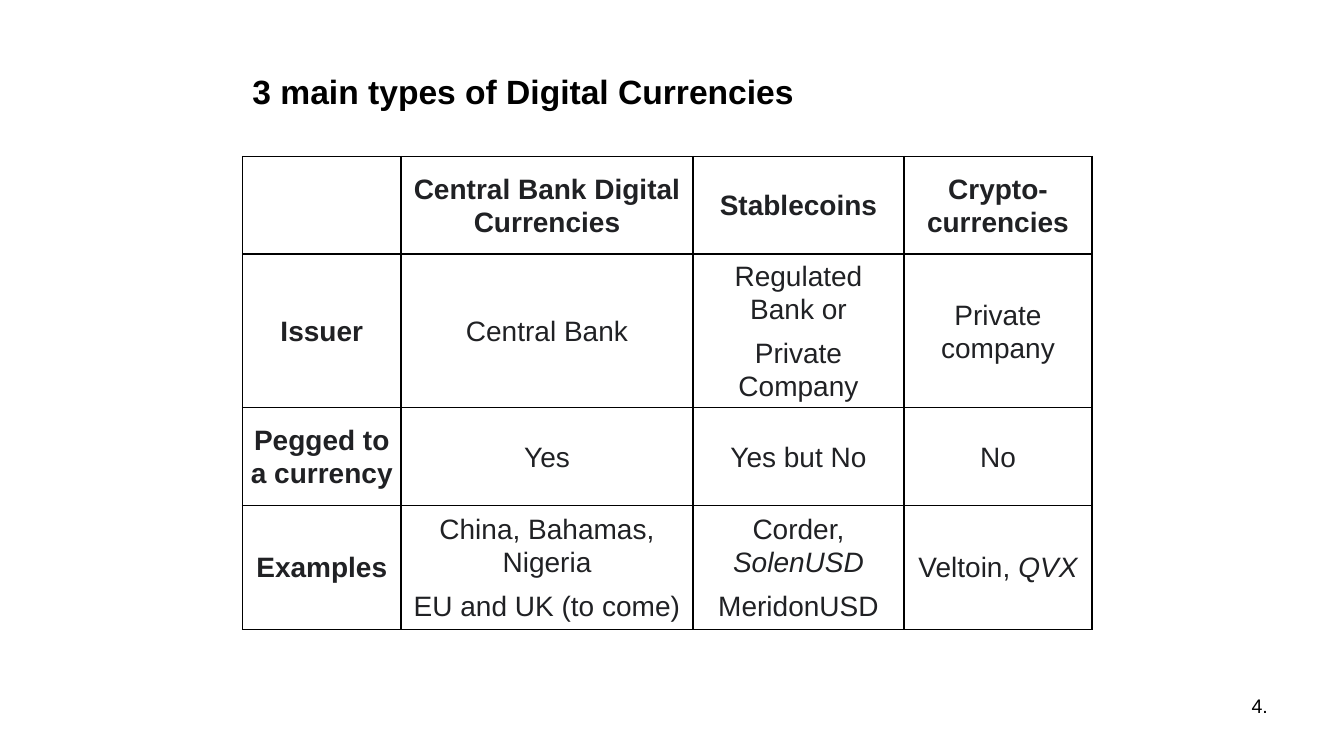
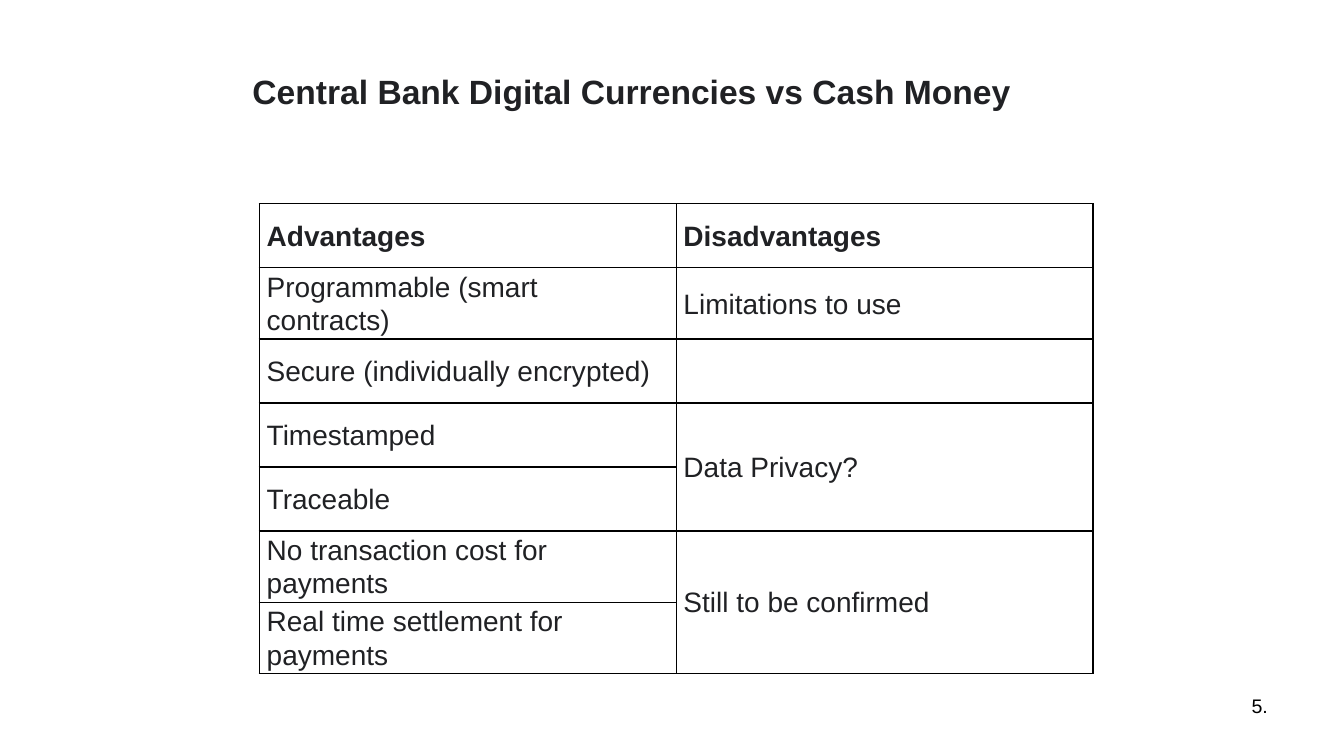
from dataclasses import dataclass

from lxml import etree
from pptx import Presentation
from pptx import util as u
from pptx.dml.color import RGBColor
from pptx.enum import text
from pptx.oxml import ns

# Shared style: lengths are px, 96 to the inch
EMU_PER_PX = 9525
FONT = "Arial"
BLACK, CHARCOAL = "000000", "202124"
TITLE_SIZE, BODY_SIZE, NUMBER_SIZE = 24, 20, 14
CELL_MARGIN = 7
LEFT, CENTER, RIGHT = text.PP_ALIGN.LEFT, text.PP_ALIGN.CENTER, text.PP_ALIGN.RIGHT


@dataclass(frozen=True)
class Run:
    words: str
    bold: bool = False
    italic: bool = False


Cell = list[list[Run]]  # paragraphs, each a list of runs


@dataclass(frozen=True)
class Box:
    left: int
    top: int
    width: int
    height: int


@dataclass(frozen=True)
class Grid:
    left: int
    top: int
    columns: list[int]
    rows: list[int]
    cells: list[list[Cell]]
    align: text.PP_ALIGN
    merges: tuple[tuple[int, int, int], ...] = ()  # column, first row, last row


TITLE_BOX = Box(231, 42, 816, 90)
NUMBER_BOX = Box(918, 656, 299, 50)


def px(length: int) -> u.Emu:
    return u.Emu(length * EMU_PER_PX)


def color(value: str) -> RGBColor:
    return RGBColor.from_string(value)


def plain(*lines: str) -> Cell:
    return [[Run(line)] for line in lines]


def bold(line: str) -> Cell:
    return [[Run(line, bold=True)]]


# Text
def add_run(paragraph, run: Run, size: int, ink: str) -> None:
    part = paragraph.add_run()
    part.text = run.words
    font = part.font
    font.name, font.size = FONT, u.Pt(size)
    font.bold, font.italic = run.bold, run.italic
    font.color.rgb = color(ink)


def add_text(slide, box: Box, run: Run, size: int, ink: str, align, anchor) -> None:
    shape = slide.shapes.add_textbox(px(box.left), px(box.top), px(box.width), px(box.height))
    frame = shape.text_frame
    frame.word_wrap = True
    frame.vertical_anchor = anchor
    paragraph = frame.paragraphs[0]
    paragraph.alignment = align
    add_run(paragraph, run, size, ink)


# Tables
def add_borders(cell) -> None:
    properties = cell._tc.get_or_add_tcPr()
    for side in ("lnL", "lnR", "lnT", "lnB"):
        line = etree.SubElement(properties, ns.qn(f"a:{side}"), w=str(u.Pt(1)))
        fill = etree.SubElement(line, ns.qn("a:solidFill"))
        etree.SubElement(fill, ns.qn("a:srgbClr"), val=BLACK)


def fill_cell(cell, content: Cell, align) -> None:
    add_borders(cell)
    cell.fill.background()
    cell.vertical_anchor = text.MSO_ANCHOR.MIDDLE
    cell.margin_left = cell.margin_right = px(CELL_MARGIN)
    cell.margin_top = cell.margin_bottom = 0
    frame = cell.text_frame
    for index, runs in enumerate(content):
        paragraph = frame.add_paragraph() if index else frame.paragraphs[0]
        paragraph.alignment = align
        paragraph.line_spacing = 1.06
        paragraph.space_after = u.Pt(8)
        for run in runs:
            add_run(paragraph, run, BODY_SIZE, CHARCOAL)


def add_grid(slide, grid: Grid) -> None:
    table = slide.shapes.add_table(
        len(grid.rows), len(grid.columns), px(grid.left), px(grid.top),
        px(sum(grid.columns)), px(sum(grid.rows))).table
    table.first_row = table.horz_banding = False
    for column, width in zip(table.columns, grid.columns):
        column.width = px(width)
    for row, height in zip(table.rows, grid.rows):
        row.height = px(height)
    for column, first, last in grid.merges:
        table.cell(first, column).merge(table.cell(last, column))
    for r, contents in enumerate(grid.cells):
        for c, content in enumerate(contents):
            fill_cell(table.cell(r, c), content, grid.align)


def add_page(presentation, number: str, title: str, title_ink: str, grid: Grid) -> None:
    slide = presentation.slides.add_slide(presentation.slide_layouts[6])
    add_text(slide, NUMBER_BOX, Run(number), NUMBER_SIZE, BLACK, RIGHT, text.MSO_ANCHOR.TOP)
    add_text(slide, TITLE_BOX, Run(title, bold=True), TITLE_SIZE, title_ink, LEFT,
             text.MSO_ANCHOR.MIDDLE)
    add_grid(slide, grid)


# Content
CURRENCY_TYPES = Grid(
    231, 149, [151, 278, 201, 179], [93, 118, 93, 118],
    [
        [[], bold("Central Bank Digital Currencies"), bold("Stablecoins"),
         bold("Crypto-currencies")],
        [bold("Issuer"), plain("Central Bank"),
         plain("Regulated Bank or", "Private Company"), plain("Private company")],
        [bold("Pegged to a currency"), plain("Yes"), plain("Yes but No"), plain("No")],
        [bold("Examples"), plain("China, Bahamas, Nigeria", "EU and UK (to come)"),
         [[Run("Corder, "), Run("SolenUSD", italic=True)], [Run("MeridonUSD")]],
         [[Run("Veltoin, "), Run("QVX", italic=True)]]],
    ],
    CENTER)

CASH_COMPARISON = Grid(
    247, 194, [397] * 2, [61] * 7,
    [
        [bold("Advantages"), bold("Disadvantages")],
        [plain("Programmable (smart contracts)"), plain("Limitations to use")],
        [plain("Secure (individually encrypted)"), []],
        [plain("Timestamped"), plain("Data Privacy?")],
        [plain("Traceable"), []],
        [plain("No transaction cost for payments"), plain("Still to be confirmed")],
        [plain("Real time settlement for payments"), []],
    ],
    LEFT, merges=((1, 3, 4), (1, 5, 6)))


def main() -> None:
    presentation = Presentation()
    presentation.slide_width, presentation.slide_height = px(1280), px(720)
    add_page(presentation, "4.", "3 main types of Digital Currencies", BLACK, CURRENCY_TYPES)
    add_page(presentation, "5.", "Central Bank Digital Currencies vs Cash Money", CHARCOAL,
             CASH_COMPARISON)
    presentation.save("out.pptx")


if __name__ == "__main__":
    main()
